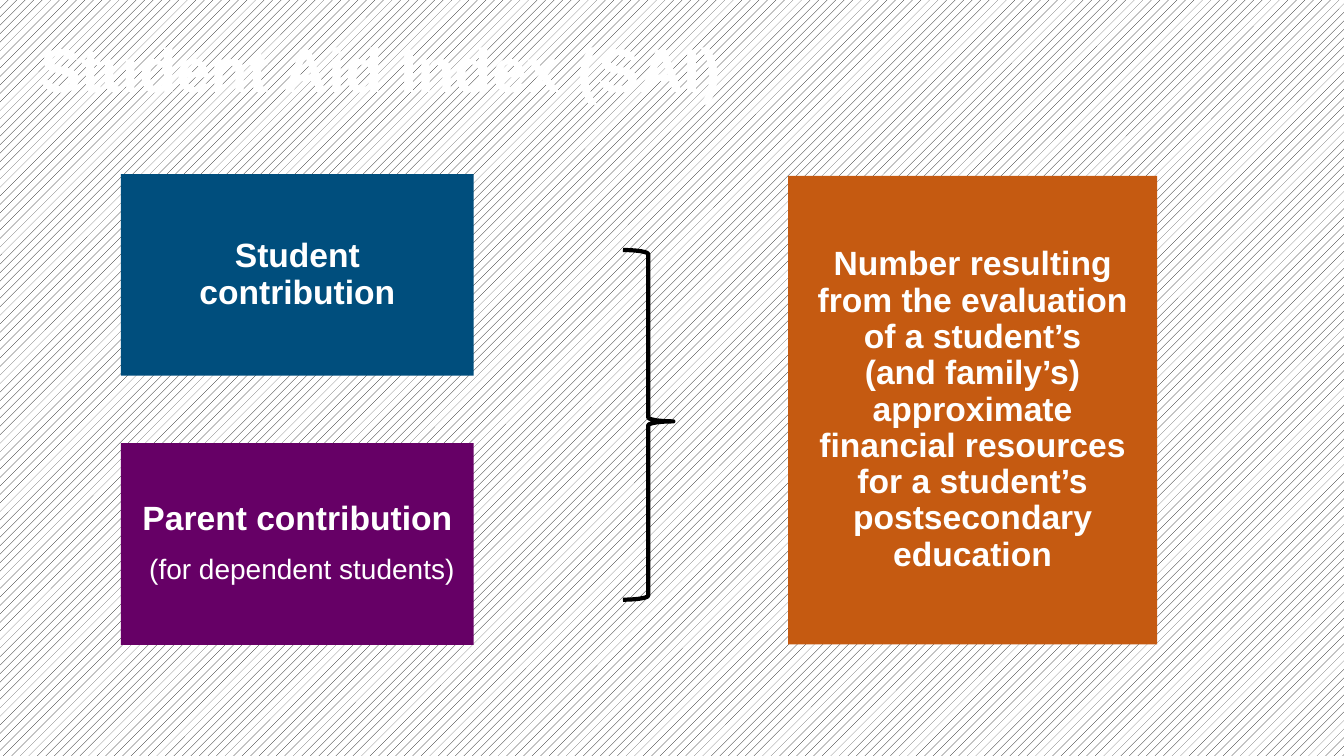
from pptx import Presentation
from pptx import util as u
from pptx.dml.color import RGBColor
from pptx.enum import dml, shapes, text

FONT, WHITE, BLACK = "Arial", "FFFFFF", "000000"

TITLE = [[("Student Aid Index (SAI)", 44, True)]]
RESULT = [[("Number resulting from the evaluation of a student’s", 24, True),
           ("\v", 24, True),
           ("(and family’s) approximate financial resources "
            "for a student’s postsecondary education", 24, True)]]
CONTRIBUTIONS = [
    ("004E7D", [[("Student contribution", 24, True)]]),
    ("660066", [[("Parent contribution", 24, True)],
                [(" ", 24, False), ("(for dependent students)", 20, False)]]),
]

TITLE_AT = (0.76, 0.25, 29.21, 3.15)
RESULT_AT = (19.86, 4.43, 9.3, 11.81)
BRACE_AT = (15.7, 6.3, 1.27, 8.81)
LEFT, TOP, WIDTH, HEIGHT, STEP = 3.05, 4.39, 8.89, 5.08, 6.78


def color(hex_code):
    return RGBColor.from_string(hex_code)


def cm(values):
    return [u.Cm(v) for v in values]


def write(sp, paragraphs, align):
    tf = sp.text_frame
    tf.word_wrap = True
    tf.vertical_anchor = text.MSO_ANCHOR.MIDDLE
    for i, runs in enumerate(paragraphs):
        p = tf.add_paragraph() if i else tf.paragraphs[0]
        p.alignment = align
        p.line_spacing = 0.9
        if i < len(paragraphs) - 1:
            p.space_after = u.Pt(9)
        for words, size, bold in runs:
            if words == "\v":
                p.add_line_break()
                continue
            r = p.add_run()
            r.text = words
            r.font.name = FONT
            r.font.size = u.Pt(size)
            r.font.bold = bold
            r.font.color.rgb = color(WHITE)


def add_box(s, at, fill, paragraphs):
    sp = s.shapes.add_shape(shapes.MSO_SHAPE.RECTANGLE, *cm(at))
    sp.shadow.inherit = False
    sp.fill.solid()
    sp.fill.fore_color.rgb = color(fill)
    sp.line.fill.background()
    tf = sp.text_frame
    tf.margin_left = tf.margin_right = u.Cm(0.38)
    tf.margin_top = tf.margin_bottom = u.Cm(0.38)
    write(sp, paragraphs, text.PP_ALIGN.CENTER)


def add_brace(s):
    sp = s.shapes.add_shape(shapes.MSO_SHAPE.LEFT_BRACE, *cm(BRACE_AT))
    sp.shadow.inherit = False
    sp.rotation = 180
    sp.adjustments[0] = 0.08
    sp.adjustments[1] = 0.51
    sp.fill.background()
    sp.line.color.rgb = color(BLACK)
    sp.line.width = u.Pt(3)


def main():
    prs = Presentation()
    prs.slide_width, prs.slide_height = cm((33.87, 19.05))
    s = prs.slides.add_slide(prs.slide_layouts[6])

    backdrop = s.background.fill
    backdrop.patterned()
    backdrop.pattern = dml.MSO_PATTERN.PERCENT_20
    backdrop.fore_color.rgb = color(BLACK)
    backdrop.back_color.rgb = color(WHITE)

    write(s.shapes.add_textbox(*cm(TITLE_AT)), TITLE, text.PP_ALIGN.LEFT)
    add_box(s, RESULT_AT, "C55A11", RESULT)
    for i, (fill, paragraphs) in enumerate(CONTRIBUTIONS):
        add_box(s, (LEFT, TOP + i * STEP, WIDTH, HEIGHT), fill, paragraphs)
    add_brace(s)
    prs.save("out.pptx")


if __name__ == "__main__":
    main()
